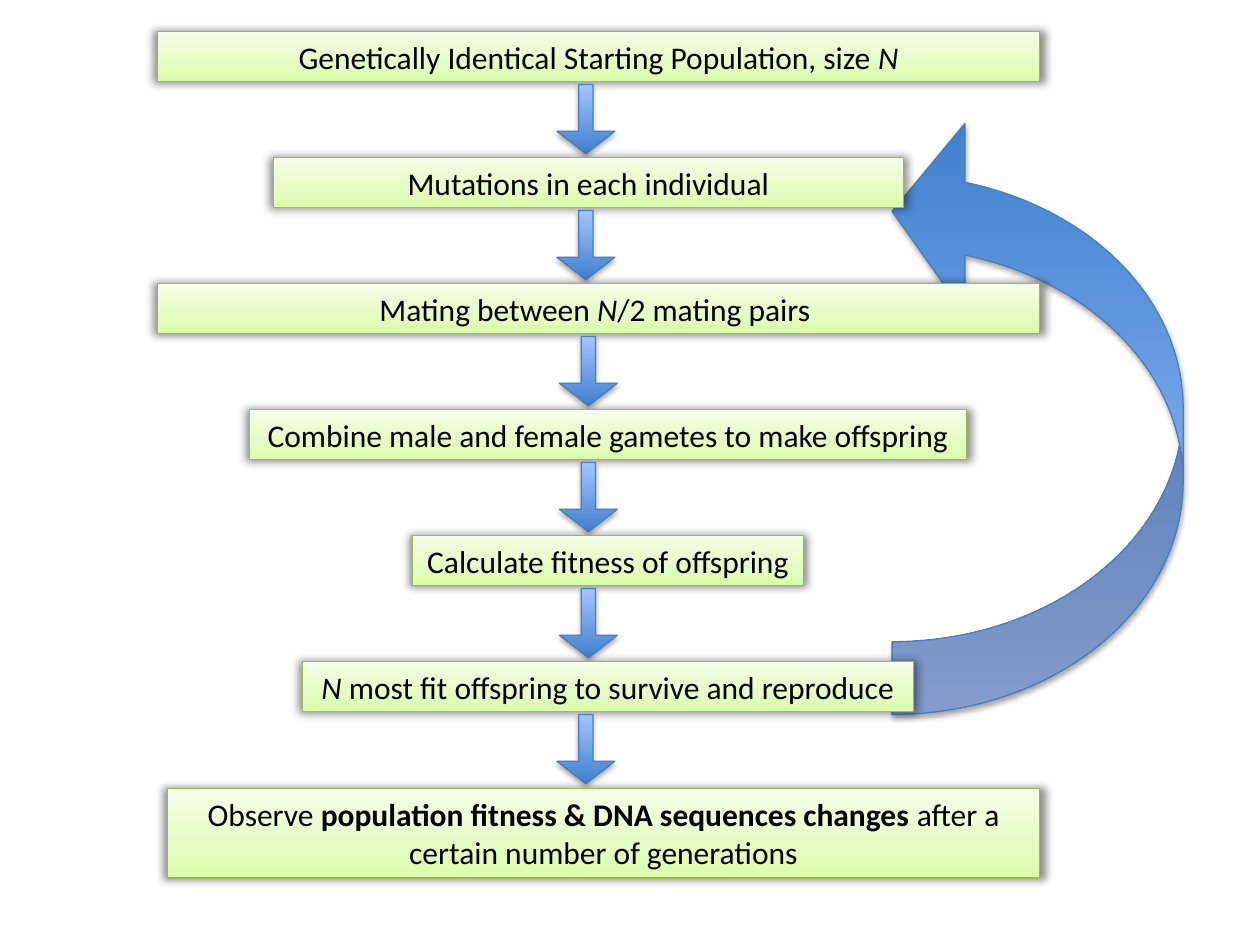
import pptx
import pptx.dml.color
import pptx.enum.shapes
import pptx.enum.text
import pptx.oxml
import pptx.oxml.ns
import pptx.util
from pptx.util import Inches

COLORS = {
    "box_line": "98B955",
    "arrow_line": "4B7EBC",
    "text": "000000",
    "shadow": "000000",
}
BOX_STOPS = [(0, "DAFDA7"), (35, "E4FCC2"), (100, "F5FFE7")]
ARROW_STOPS = [(0, "3F80CE"), (100, "A4C4FF")]
BOX_SHADOW = {"opacity": 43, "blur": 5, "distance": 0, "angle": 0, "scale": 101}
ARROW_SHADOW = {"opacity": 35, "blur": 3.1, "distance": 1.8, "angle": 90, "scale": 100}

FIRST_TOP = 0.25
STEP_PITCH = 1
BOX_HEIGHT = 0.4
ARROW_OFFSET = 0.42

# left, width, wraps, text pieces with their style
STEPS = [
    (1.25, 7, True, [("Genetically Identical Starting Population, size ", ""), ("N", "italic")]),
    (2.17, 5, True, [("Mutations in each individual", "")]),
    (1.25, 7, True, [("Mating between ", ""), ("N", "italic"), ("/2 mating pairs ", "")]),
    (1.98, 5.69, False, [("Combine male and female gametes to make offspring", "")]),
    (3.27, 3.11, False, [("Calculate fitness of offspring", "")]),
    (2.4, 4.85, False, [("N ", "italic"), ("most fit offspring to survive and reproduce", "")]),
]
OUTCOME = [
    ("Observe ", ""),
    ("population fitness & DNA sequences changes ", "bold"),
    ("after a certain number of generations", ""),
]
ARROW_LEFTS = [4.42, 4.42, 4.44, 4.44, 4.44, 4.42]


def rgb(name):
    return pptx.dml.color.RGBColor.from_string(COLORS[name])


def set_gradient(shape, stops):
    shape.fill.gradient()
    shape.fill.gradient_angle = 90
    stop_list = shape._element.spPr.find(".//" + pptx.oxml.ns.qn("a:gsLst"))
    for stop in list(stop_list):
        stop_list.remove(stop)
    for position, color in stops:
        stop_list.append(pptx.oxml.parse_xml(
            f'<a:gs {pptx.oxml.ns.nsdecls("a")} pos="{position * 1000}">'
            f'<a:srgbClr val="{color}"/></a:gs>'))


def set_shadow(shape, opacity, blur, distance, angle, scale):
    shape.shadow.inherit = False
    effects = shape._element.spPr.find(pptx.oxml.ns.qn("a:effectLst"))
    effects.append(pptx.oxml.parse_xml(
        f'<a:outerShdw {pptx.oxml.ns.nsdecls("a")} blurRad="{pptx.util.Pt(blur)}" '
        f'dist="{pptx.util.Pt(distance)}" dir="{angle * 60000}" '
        f'sx="{scale * 1000}" sy="{scale * 1000}" algn="ctr" rotWithShape="0">'
        f'<a:srgbClr val="{COLORS["shadow"]}"><a:alpha val="{opacity * 1000}"/></a:srgbClr>'
        f'</a:outerShdw>'))


def add_styled_shape(slide, kind, bounds, stops, line, shadow):
    shape = slide.shapes.add_shape(kind, *map(Inches, bounds))
    set_gradient(shape, stops)
    shape.line.color.rgb = rgb(line)
    shape.line.width = pptx.util.Pt(0.75)
    set_shadow(shape, **shadow)
    return shape


def add_box(slide, bounds, pieces, wraps=True):
    shape = add_styled_shape(slide, pptx.enum.shapes.MSO_SHAPE.RECTANGLE, bounds,
                             BOX_STOPS, "box_line", BOX_SHADOW)
    text_frame = shape.text_frame
    text_frame.word_wrap = wraps
    text_frame.auto_size = pptx.enum.text.MSO_AUTO_SIZE.SHAPE_TO_FIT_TEXT
    text_frame.vertical_anchor = pptx.enum.text.MSO_ANCHOR.TOP
    paragraph = text_frame.paragraphs[0]
    paragraph.alignment = pptx.enum.text.PP_ALIGN.CENTER
    for text, style in pieces:
        run = paragraph.add_run()
        run.text = text
        run.font.name = "Calibri"
        run.font.size = pptx.util.Pt(18)
        run.font.color.rgb = rgb("text")
        run.font.italic = style == "italic"
        run.font.bold = style == "bold"


def add_arrow(slide, kind, bounds, adjustments):
    shape = add_styled_shape(slide, kind, bounds, ARROW_STOPS, "arrow_line", ARROW_SHADOW)
    for index, value in enumerate(adjustments):
        shape.adjustments[index] = value
    return shape


def main():
    presentation = pptx.Presentation()
    presentation.slide_width = Inches(10)
    presentation.slide_height = Inches(7.5)
    slide = presentation.slides.add_slide(presentation.slide_layouts[6])

    loop_arrow = add_arrow(slide, pptx.enum.shapes.MSO_SHAPE.CURVED_RIGHT_ARROW,
                           (7.08, 0.92, 2.31, 4.75), (0.25, 0.655, 0.25))
    loop_arrow.rotation = 180

    for index, (left, width, wraps, pieces) in enumerate(STEPS):
        top = FIRST_TOP + index * STEP_PITCH
        add_box(slide, (left, top, width, BOX_HEIGHT), pieces, wraps)
        add_arrow(slide, pptx.enum.shapes.MSO_SHAPE.DOWN_ARROW,
                  (ARROW_LEFTS[index], top + ARROW_OFFSET, 0.46, 0.55), (0.245, 0.388))
    add_box(slide, (1.33, 6.26, 6.92, 0.71), OUTCOME)

    presentation.save("out.pptx")


if __name__ == "__main__":
    main()
